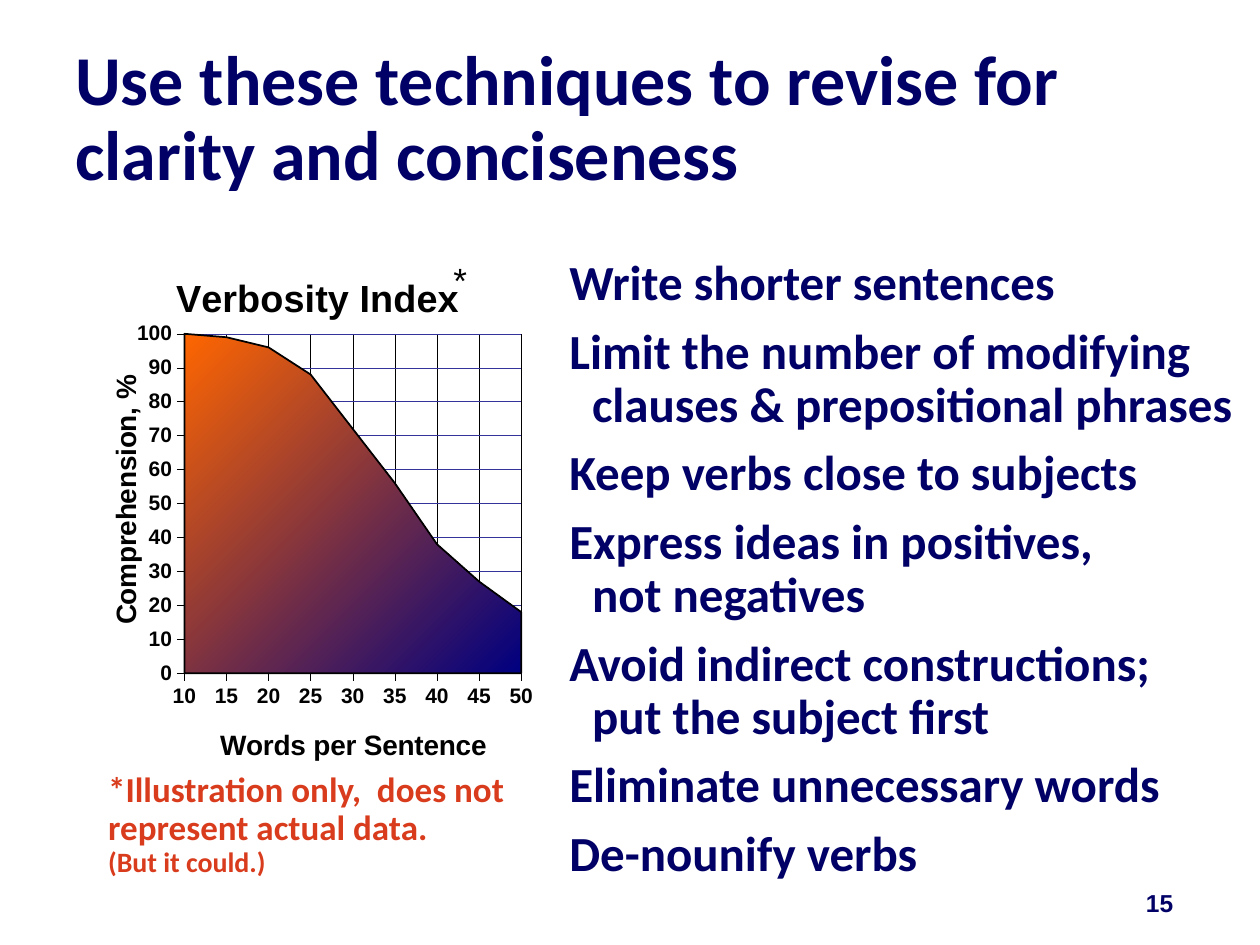
import pptx
import pptx.chart.data
import pptx.dml.color
import pptx.enum.chart
import pptx.enum.text
import pptx.oxml
import pptx.util
from pptx.util import Inches

NAVY, BLACK, RED = "000066", "000000", "D93C1D"
CHART_NS = "http://schemas.openxmlformats.org/drawingml/2006/chart"
TECHNIQUES = [
    "Write shorter sentences",
    "Limit the number of modifying\nclauses & prepositional phrases",
    "Keep verbs close to subjects",
    "Express ideas in positives,\nnot negatives",
    "Avoid indirect constructions;\nput the subject first",
    "Eliminate unnecessary words",
    "De-nounify verbs",
]
COMPREHENSION = {10: 100, 15: 99, 20: 96, 25: 88, 30: 72, 35: 56, 40: 38, 45: 27, 50: 18}


def color(value):
    """Turn a hex string into a colour."""
    return pptx.dml.color.RGBColor.from_string(value)


def apply_values(target, values):
    """Set each named attribute on the target."""
    for name, value in values.items():
        setattr(target, name, value)


def style_font(font, name, size, fill, bold=True):
    """Set the typeface, point size, colour and weight of a font."""
    apply_values(font, {"name": name, "size": pptx.util.Pt(size), "bold": bold})
    font.color.rgb = color(fill)


def style_line(line, fill, width):
    """Set the colour and point width of a line."""
    line.color.rgb = color(fill)
    line.width = pptx.util.Pt(width)


def add_text(slide, box, lines, fonts, paragraph_values=None, frame_values=None, hanging=0):
    """Add a text box with one paragraph per line and one font per paragraph."""
    shape = slide.shapes.add_textbox(*map(Inches, box))
    frame = shape.text_frame
    apply_values(frame, {"word_wrap": True, **(frame_values or {})})
    for index, (line, font) in enumerate(zip(lines, fonts)):
        paragraph = frame.add_paragraph() if index else frame.paragraphs[0]
        paragraph.text = line
        apply_values(paragraph, paragraph_values or {})
        for run in paragraph.runs:
            style_font(run.font, *font)
        if hanging:
            properties = paragraph._p.get_or_add_pPr()
            properties.set("marL", str(Inches(hanging)))
            properties.set("indent", str(-Inches(hanging)))


def place(element, index, inner=False, **fractions):
    """Give a chart part a manual layout in fractions of the chart."""
    for layout in element.findall(f"{{{CHART_NS}}}layout"):
        element.remove(layout)
    target = '<c:layoutTarget val="inner"/>' if inner else ""
    modes = '<c:xMode val="edge"/><c:yMode val="edge"/>'
    sizes = "".join(f'<c:{name} val="{value}"/>' for name, value in fractions.items())
    element.insert(index, pptx.oxml.parse_xml(
        f'<c:layout xmlns:c="{CHART_NS}"><c:manualLayout>{target}{modes}{sizes}'
        "</c:manualLayout></c:layout>"))


def set_title(title, text, size, x, y, rotation=0):
    """Write, style, turn and place a chart or axis title."""
    frame = title.text_frame
    frame.text = text
    style_font(frame.paragraphs[0].runs[0].font, "Arial", size, BLACK)
    frame._txBody.bodyPr.set("rot", str(rotation * 60000))
    place(title._element, 1, x=x, y=y)


def style_axis(axis, grid):
    """Style the labels, ticks, line and gridlines of an axis."""
    marks = pptx.enum.chart.XL_TICK_MARK
    apply_values(axis, {"has_major_gridlines": True, "major_tick_mark": marks.OUTSIDE,
                        "minor_tick_mark": marks.NONE})
    style_font(axis.tick_labels.font, "Arial", 12, BLACK)
    style_line(axis.format.line, BLACK, 0.25)
    style_line(axis.major_gridlines.format.line, grid, 0.25)


def add_verbosity_chart(slide):
    """Add the area chart of comprehension against sentence length."""
    data = pptx.chart.data.CategoryChartData()
    data.categories = [str(words) for words in COMPREHENSION]
    data.add_series("Series 1", COMPREHENSION.values())
    chart = slide.shapes.add_chart(
        pptx.enum.chart.XL_CHART_TYPE.AREA_STACKED,
        *map(Inches, (0.33, 1.64, 4.05, 4.81)), data).chart
    style_font(chart.font, "Times New Roman", 18, BLACK)
    chart.has_legend = False
    set_title(chart.chart_title, "Verbosity Index", 21.6, 0.25, 0.1)

    words, percent = chart.category_axis, chart.value_axis
    style_axis(words, BLACK)
    style_axis(percent, "333399")
    apply_values(percent, {"minimum_scale": 0, "maximum_scale": 100, "major_unit": 10})
    set_title(words.axis_title, "Words per Sentence", 16, 0.34, 0.85)
    set_title(percent.axis_title, "Comprehension, %", 16, 0.12, 0.27, rotation=-90)
    percent._element.find(f"{{{CHART_NS}}}crossBetween").set("val", "midCat")
    plot_area = words._element.getparent()
    place(plot_area, 0, inner=True, x=0.28, y=0.21, w=0.66, h=0.56)

    area = chart.plots[0].series[0].format
    area.fill.gradient()
    area.fill.gradient_angle = 315
    for stop, fill, position in zip(area.fill.gradient_stops, ("FF6600", "000080"), (0, 1)):
        stop.color.rgb = color(fill)
        stop.position = position
    style_line(area.line, BLACK, 1)


def main():
    """Build and save the slide."""
    presentation = pptx.Presentation()
    apply_values(presentation, {"slide_width": Inches(10), "slide_height": Inches(7.5)})
    slide = presentation.slides.add_slide(presentation.slide_layouts[6])
    tight = {"line_spacing": 0.9}
    add_text(slide, (4.42, 2, 5.58, 4.92), TECHNIQUES,
             [("Calibri", 28, NAVY)] * len(TECHNIQUES),
             {**tight, "space_after": pptx.util.Pt(9)}, hanging=0.18)
    add_text(slide, (0.5, 0.33, 9, 1.25),
             ["Use these techniques to revise for clarity and conciseness"],
             [("Calibri", 40, NAVY)], tight,
             {"vertical_anchor": pptx.enum.text.MSO_ANCHOR.MIDDLE})
    add_verbosity_chart(slide)
    add_text(slide, (3.5, 2, 0.31, 0.44), ["*"], [("Arial", 20, BLACK, False)],
             frame_values={"word_wrap": False})
    add_text(slide, (0.76, 6.08, 3.43, 0.98),
             ["*Illustration only,  does not\nrepresent actual data.", "(But it could.)"],
             [("Calibri", 20, RED), ("Calibri", 16, RED)], tight, {"word_wrap": False})
    add_text(slide, (7.33, 7, 2.08, 0.33), ["15"], [("Arial", 14, NAVY)],
             {"alignment": pptx.enum.text.PP_ALIGN.RIGHT})
    presentation.save("out.pptx")


if __name__ == "__main__":
    main()
